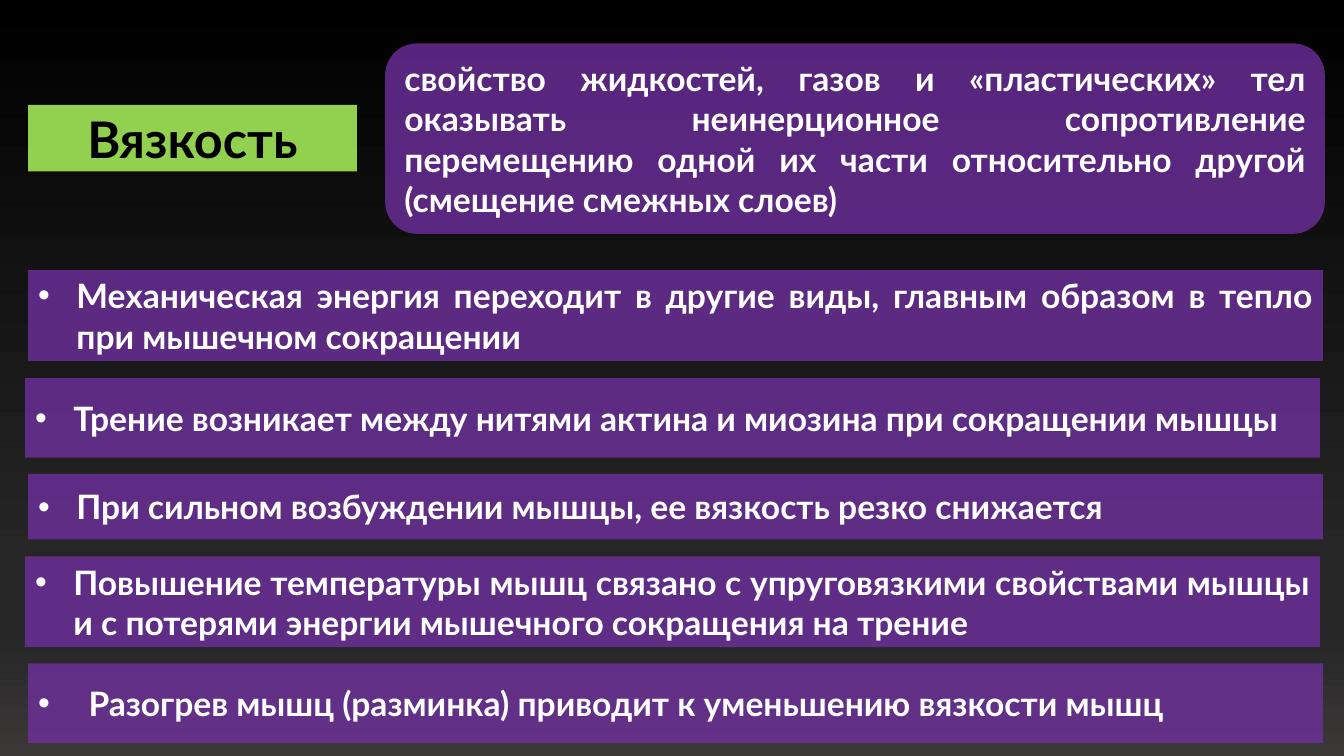
from dataclasses import dataclass

from lxml import etree
from pptx import Presentation
from pptx.dml.color import RGBColor
from pptx.enum.shapes import MSO_SHAPE as Shape
from pptx.enum.text import MSO_ANCHOR as Anchor, MSO_AUTO_SIZE as AutoSize, PP_ALIGN as Align
from pptx.oxml.ns import qn
from pptx.util import Inches, Pt


@dataclass(frozen=True)
class Theme:
    font: str = "Lato"
    title_size: int = 36
    body_size: int = 24
    title_fill: str = "92D050"
    title_text: str = "000000"
    panel_fill: str = "7030A0"
    panel_text: str = "FFFFFF"
    panel_opacity: int = 78
    backdrop: tuple = ((0, "000000"), (74, "262626"), (83, "262626"), (100, "3B3838"))


def apply(target, values):
    for name, value in values.items():
        setattr(target, name, value)


class SlideBuilder:
    def __init__(self, page, theme):
        self.page = page
        self.theme = theme

    def background(self):
        fill = self.page.background.fill
        fill.gradient()
        fill.gradient_angle = 270
        stops = self.page.element.find(".//" + qn("p:bg")).find(".//" + qn("a:gsLst"))
        for stop in list(stops):
            stops.remove(stop)
        for position, color in self.theme.backdrop:
            stop = etree.SubElement(stops, qn("a:gs"), pos=str(position * 1000))
            etree.SubElement(stop, qn("a:srgbClr"), val=color)

    def add_text(self, box, text, size, color, align):
        frame = box.text_frame
        apply(frame, {"word_wrap": True, "auto_size": AutoSize.NONE,
                      "vertical_anchor": Anchor.MIDDLE})
        para = frame.paragraphs[0]
        para.alignment = align
        span = para.add_run()
        span.text = text
        apply(span.font, {"name": self.theme.font, "size": Pt(size), "bold": True})
        span.font.color.rgb = RGBColor.from_string(color)
        return para

    def paint(self, box, color):
        box.fill.solid()
        box.fill.fore_color.rgb = RGBColor.from_string(color)
        box.line.fill.background()

    def title(self, text, left, top, width, height):
        box = self.page.shapes.title
        apply(box, {"left": Inches(left), "top": Inches(top),
                    "width": Inches(width), "height": Inches(height)})
        self.paint(box, self.theme.title_fill)
        self.add_text(box, text, self.theme.title_size, self.theme.title_text, Align.CENTER)

    def panel(self, kind, text, left, top, width, height):
        theme = self.theme
        box = self.page.shapes.add_shape(
            kind, Inches(left), Inches(top), Inches(width), Inches(height))
        box.shadow.inherit = False
        self.paint(box, theme.panel_fill)
        color = box.element.spPr.find(".//" + qn("a:srgbClr"))
        etree.SubElement(color, qn("a:alpha"), val=str(theme.panel_opacity * 1000))
        return self.add_text(box, text, theme.body_size, theme.panel_text, Align.JUSTIFY)

    def bullet_panel(self, text, left, top, width, height, indent):
        para = self.panel(Shape.FLOWCHART_PROCESS, text, left, top, width, height)
        props = para._p.get_or_add_pPr()
        props.set("marL", str(Inches(indent)))
        props.set("indent", str(-Inches(indent)))
        etree.SubElement(props, qn("a:buFont"), typeface="Arial")
        etree.SubElement(props, qn("a:buChar"), char="•")


# Text, left, top, height and hanging indent of each property panel
PROPERTIES = [
    ("Механическая энергия переходит в другие виды, главным образом в тепло "
     "при мышечном сокращении", 0.28, 2.68, 0.9, 0.38),
    ("Трение возникает между нитями актина и миозина при сокращении мышцы",
     0.25, 3.75, 0.79, 0.38),
    ("При сильном возбуждении мышцы, ее вязкость резко снижается",
     0.28, 4.7, 0.65, 0.38),
    ("Повышение температуры мышц связано с упруговязкими свойствами мышцы "
     "и с потерями энергии мышечного сокращения на трение", 0.25, 5.52, 0.9, 0.38),
    ("Разогрев мышц (разминка) приводит к уменьшению вязкости мышц",
     0.28, 6.58, 0.79, 0.5),
]
PANEL_WIDTH = 12.84


def main():
    deck = Presentation()
    apply(deck, {"slide_width": Inches(13.33), "slide_height": Inches(7.5)})
    page = deck.slides.add_slide(deck.slide_layouts[5])
    builder = SlideBuilder(page, Theme())
    builder.background()

    # Term and its definition
    builder.title("Вязкость", 0.28, 1.04, 3.26, 0.66)
    builder.panel(
        Shape.FLOWCHART_ALTERNATE_PROCESS,
        "свойство жидкостей, газов и «пластических» тел оказывать неинерционное "
        "сопротивление перемещению одной их части относительно другой "
        "(смещение смежных слоев)",
        3.82, 0.43, 9.32, 1.89)

    # Properties of muscle viscosity
    for text, left, top, height, indent in PROPERTIES:
        builder.bullet_panel(text, left, top, PANEL_WIDTH, height, indent)

    deck.save("out.pptx")


if __name__ == "__main__":
    main()
